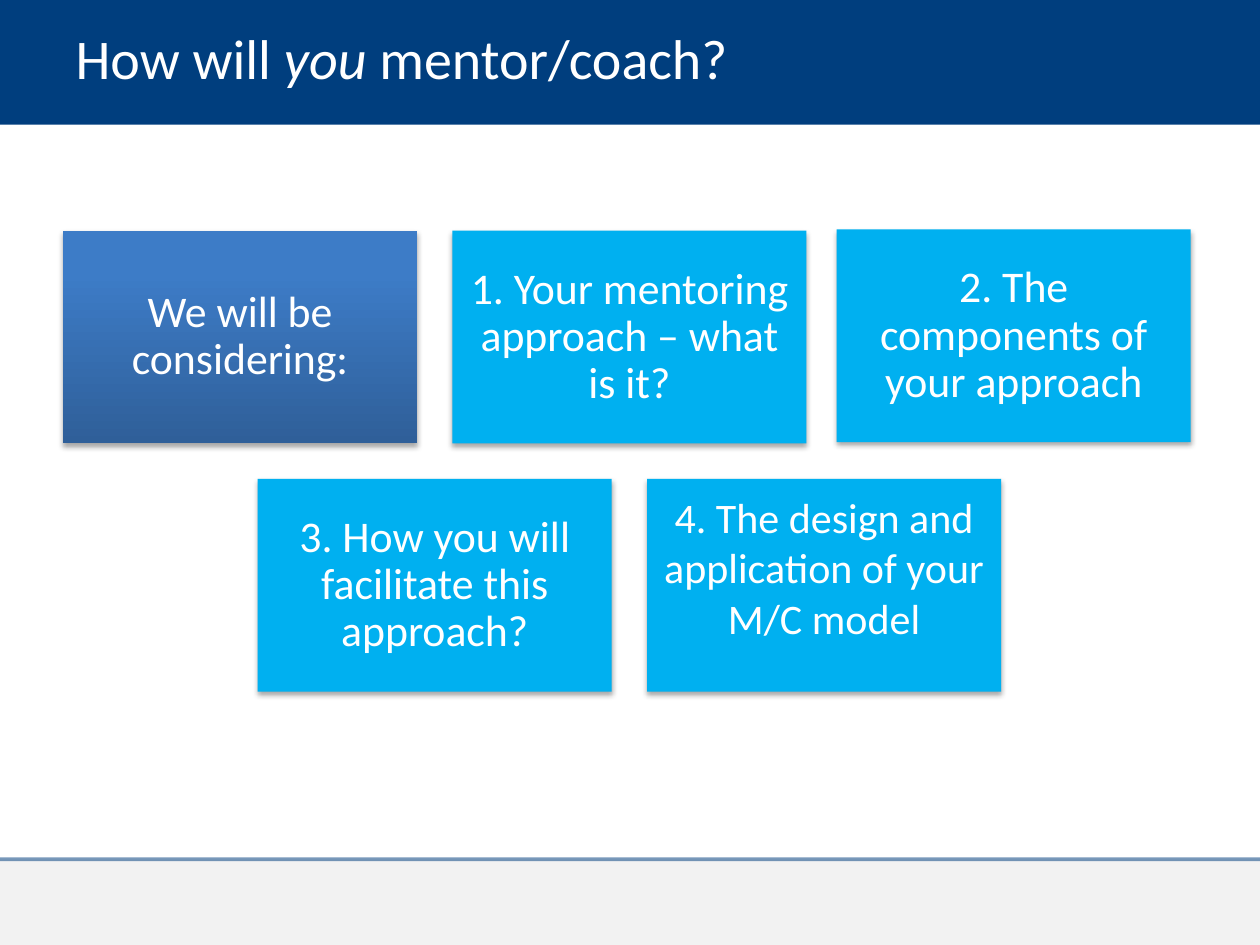
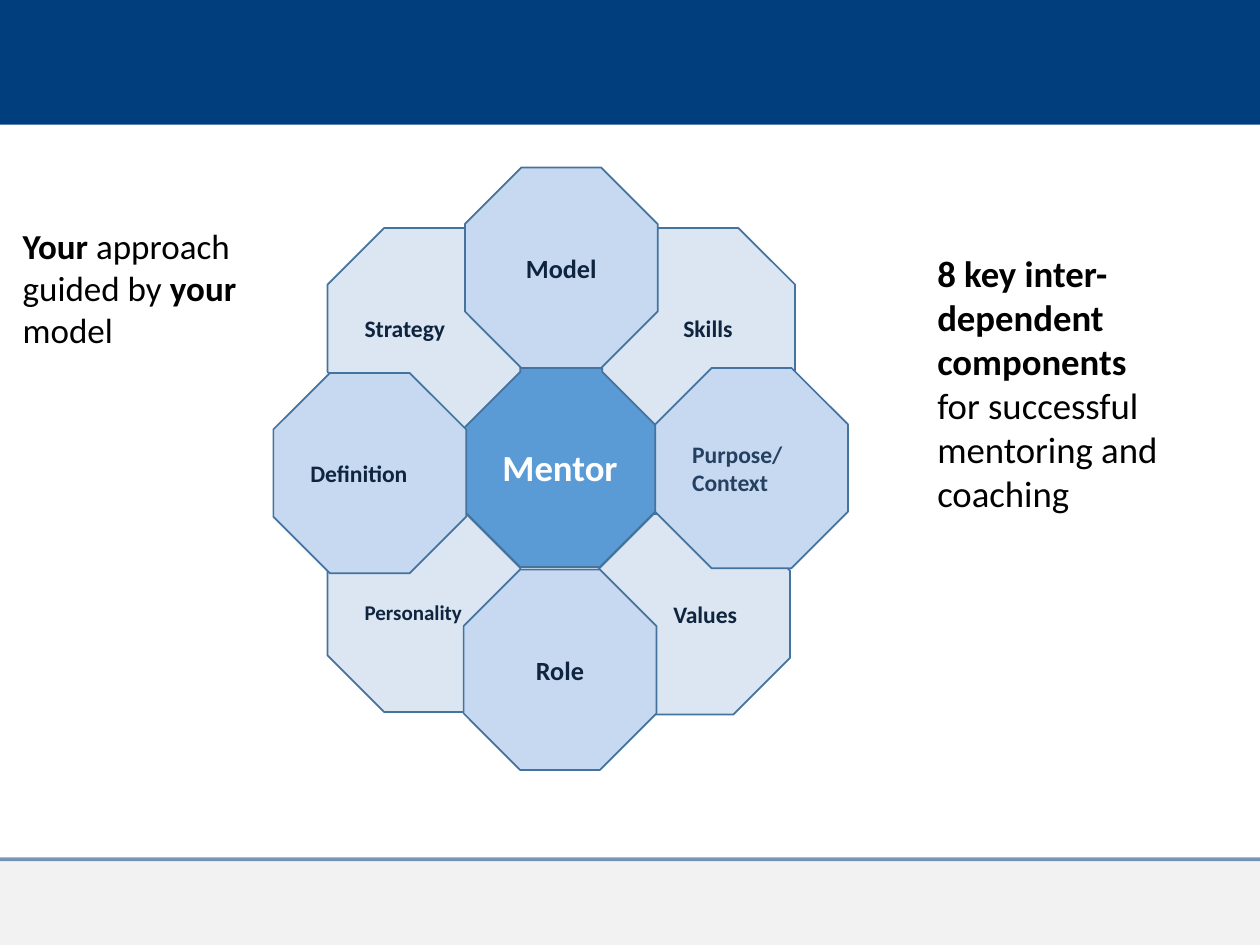
"""Build two mentoring slides: a tile overview and an octagon flower model."""
from dataclasses import dataclass
from typing import Optional

from lxml.etree import SubElement
from pptx import Presentation
from pptx.dml.color import RGBColor
from pptx.enum.shapes import MSO_CONNECTOR as Connector, MSO_SHAPE as Preset
from pptx.enum.text import MSO_ANCHOR as Anchor, PP_ALIGN as Align
from pptx.oxml.ns import qn
from pptx.slide import Slide
from pptx.text.text import TextFrame
from pptx.util import Inches, Pt


@dataclass(frozen=True)
class Theme:
    font: str = "Calibri"
    navy: str = "003E7E"
    footer: str = "808080"
    white: str = "FFFFFF"
    black: str = "000000"
    sky: str = "00B0F0"
    intro_dark: str = "2F5F99"
    intro_light: str = "3D7CC7"
    core: str = "5B9BD5"
    outer_petal: str = "DCE6F2"
    main_petal: str = "C6D9F1"
    outline: str = "43739E"
    ink: str = "0F243E"
    soft_ink: str = "254061"
    title_size: float = 32
    tile_size: float = 25
    last_tile_size: float = 24
    core_size: float = 21
    caption_size: float = 20
    main_size: float = 15
    petal_size: float = 13.5
    small_size: float = 12


THEME = Theme()


@dataclass(frozen=True)
class Span:
    text: str
    size: float
    color: str = THEME.white
    bold: bool = False
    italic: bool = False


@dataclass(frozen=True)
class Tile:
    text: str
    column: float
    row: int
    shift_x: float = 0
    shift_y: float = 0
    size: float = THEME.tile_size
    spacing: Optional[float] = 0.9
    anchor: Anchor = Anchor.MIDDLE
    fill: Optional[str] = THEME.sky


@dataclass(frozen=True)
class Petal:
    text: str
    left: float
    top: float
    fill: str
    size: float = THEME.petal_size
    ink: str = THEME.ink
    align: Align = Align.LEFT
    indent: float = 0


TILE_WIDTH, TILE_HEIGHT = 2.81, 1.69
COLUMN_PITCH, ROW_PITCH = 3.09, 1.97
GRID_LEFT, GRID_TOP = 0.5, 1.83
PETAL_WIDTH, PETAL_HEIGHT = 1.53, 1.59

TILES = [
    Tile("We will be considering:", 0, 0, fill=None),
    Tile("1. Your mentoring approach – what is it?", 1, 0),
    Tile("2. The components of your approach", 2, 0, -0.04, -0.01),
    Tile("3. How you will facilitate this approach?", 0.5, 1),
    Tile("4. The design and application of your M/C model", 1.5, 1,
         size=THEME.last_tile_size, spacing=None, anchor=Anchor.TOP),
]

PETALS = [
    Petal("Mentor", 3.68, 2.91, THEME.core, THEME.core_size, THEME.white, Align.CENTER),
    Petal("Personality", 2.6, 4.06, THEME.outer_petal, THEME.small_size),
    Petal("Strategy", 2.6, 1.81, THEME.outer_petal),
    Petal("Values", 4.74, 4.08, THEME.outer_petal, indent=0.31),
    Petal("Skills", 4.78, 1.81, THEME.outer_petal, indent=0.35),
    Petal("Role", 3.68, 4.52, THEME.main_petal, THEME.main_size, align=Align.CENTER),
    Petal("Purpose/\nContext", 5.2, 2.92, THEME.main_petal, ink=THEME.soft_ink),
    Petal("Model", 3.69, 1.33, THEME.main_petal, THEME.main_size, align=Align.CENTER),
    Petal("Definition", 2.17, 2.96, THEME.main_petal),
]


def rgb(color: str) -> RGBColor:
    return RGBColor.from_string(color)


def place(shape, left: float, top: float, width: float, height: float) -> None:
    shape.left, shape.top = Inches(left), Inches(top)
    shape.width, shape.height = Inches(width), Inches(height)


def write(frame: TextFrame, spans: list[Span], align: Align = Align.LEFT,
          anchor: Anchor = Anchor.TOP, spacing: Optional[float] = None) -> None:
    frame.word_wrap = True
    frame.vertical_anchor = anchor
    paragraph = frame.paragraphs[0]
    paragraph.alignment = align
    paragraph.space_before = Pt(0)
    if spacing:
        paragraph.line_spacing = spacing
    for span in spans:
        for number, line in enumerate(span.text.split("\n")):
            if number:
                paragraph.add_line_break()
            run = paragraph.add_run()
            run.text = line
            run.font.name, run.font.size = THEME.font, Pt(span.size)
            run.font.bold, run.font.italic = span.bold, span.italic
            run.font.color.rgb = rgb(span.color)


def set_insets(frame: TextFrame, left: float, top: float, right: float, bottom: float) -> None:
    frame.margin_left, frame.margin_top = Inches(left), Inches(top)
    frame.margin_right, frame.margin_bottom = Inches(right), Inches(bottom)


def set_opacity(shape, percent: int) -> None:
    for color in shape.element.spPr.iter(qn("a:srgbClr")):
        SubElement(color, qn("a:alpha"), val=str(percent * 1000))


def add_block(slide: Slide, preset: Preset, left: float, top: float, width: float,
              height: float, fill: Optional[str], outline: Optional[str] = None):
    block = slide.shapes.add_shape(
        preset, Inches(left), Inches(top), Inches(width), Inches(height))
    block.shadow.inherit = False
    if fill:
        block.fill.solid()
        block.fill.fore_color.rgb = rgb(fill)
    if outline:
        block.line.color.rgb = rgb(outline)
        block.line.width = Pt(1)
    else:
        block.line.fill.background()
    return block


def add_master_bands(slide: Slide) -> None:
    header = add_block(slide, Preset.RECTANGLE, 0, 0, 10, 0.99, THEME.navy)
    footer = add_block(slide, Preset.RECTANGLE, 0, 6.82, 10, 0.68, THEME.footer)
    set_opacity(footer, 10)
    rule = slide.shapes.add_connector(
        Connector.STRAIGHT, Inches(0), Inches(6.82), Inches(10), Inches(6.82))
    rule.line.color.rgb = rgb(THEME.navy)
    rule.line.width = Pt(2.25)
    set_opacity(rule, 52)
    SubElement(rule.element.spPr, qn("a:effectLst"))
    master_tree = slide.slide_layout.slide_master.shapes.element
    for position, band in enumerate((header, footer, rule), start=2):
        master_tree.insert(position, band.element)


def add_soft_shadow(shape) -> None:
    effects = shape.element.spPr.find(qn("a:effectLst"))
    shadow = SubElement(effects, qn("a:outerShdw"), blurRad=str(Pt(3.1)),
                        dist=str(Pt(1.8)), dir="5400000", rotWithShape="0")
    color = SubElement(shadow, qn("a:srgbClr"), val=THEME.black)
    SubElement(color, qn("a:alpha"), val="35000")


def add_tile(slide: Slide, tile: Tile) -> None:
    card = add_block(slide, Preset.RECTANGLE,
                     GRID_LEFT + tile.column * COLUMN_PITCH + tile.shift_x,
                     GRID_TOP + tile.row * ROW_PITCH + tile.shift_y,
                     TILE_WIDTH, TILE_HEIGHT, tile.fill)
    if not tile.fill:
        card.fill.gradient()
        card.fill.gradient_angle = 90
        bottom, top = card.fill.gradient_stops
        bottom.color.rgb, top.color.rgb = rgb(THEME.intro_dark), rgb(THEME.intro_light)
        top.position = 0.8
    add_soft_shadow(card)
    set_insets(card.text_frame, 0.1, 0.1, 0.1, 0.1)
    write(card.text_frame, [Span(tile.text, tile.size)], Align.CENTER,
          tile.anchor, tile.spacing)


def add_petal(slide: Slide, petal: Petal) -> None:
    octagon = add_block(slide, Preset.OCTAGON, petal.left, petal.top,
                        PETAL_WIDTH, PETAL_HEIGHT, petal.fill, THEME.outline)
    set_insets(octagon.text_frame, 0.07 + petal.indent, 0.04, 0.07, 0.04)
    write(octagon.text_frame, [Span(petal.text, petal.size, petal.ink, bold=True)],
          petal.align, Anchor.MIDDLE)


def build_overview(slide: Slide) -> None:
    title = slide.shapes.title
    place(title, 0.5, 0.23, 6.94, 0.52)
    write(title.text_frame, [
        Span("How will ", THEME.title_size),
        Span("you", THEME.title_size, italic=True),
        Span(" mentor/coach?", THEME.title_size),
    ], anchor=Anchor.MIDDLE, spacing=0.9)
    for tile in TILES:
        add_tile(slide, tile)


def build_model(slide: Slide) -> None:
    unused_title = slide.shapes.title.element
    unused_title.getparent().remove(unused_title)
    approach = slide.placeholders[1]
    place(approach, 0.08, 1.73, 2.07, 2.82)
    properties = approach.text_frame.paragraphs[0]._p.get_or_add_pPr()
    properties.set("marL", "0")
    properties.set("indent", "0")
    SubElement(properties, qn("a:buNone"))
    write(approach.text_frame, [
        Span("Your", THEME.caption_size, THEME.black, bold=True),
        Span(" approach guided by ", THEME.caption_size, THEME.black),
        Span("your ", THEME.caption_size, THEME.black, bold=True),
        Span("model", THEME.caption_size, THEME.black),
    ])
    for petal in PETALS:
        add_petal(slide, petal)
    components = slide.shapes.add_textbox(
        Inches(7.34), Inches(1.94), Inches(2.05), Inches(2.45))
    write(components.text_frame, [
        Span("8 key inter-dependent components", THEME.core_size, THEME.black, bold=True),
        Span(" for successful mentoring and coaching", THEME.core_size, THEME.black),
    ])


def main() -> None:
    deck = Presentation()
    deck.slide_width, deck.slide_height = Inches(10), Inches(7.5)
    overview = deck.slides.add_slide(deck.slide_layouts[5])
    add_master_bands(overview)
    build_overview(overview)
    build_model(deck.slides.add_slide(deck.slide_layouts[1]))
    deck.save("out.pptx")


if __name__ == "__main__":
    main()
